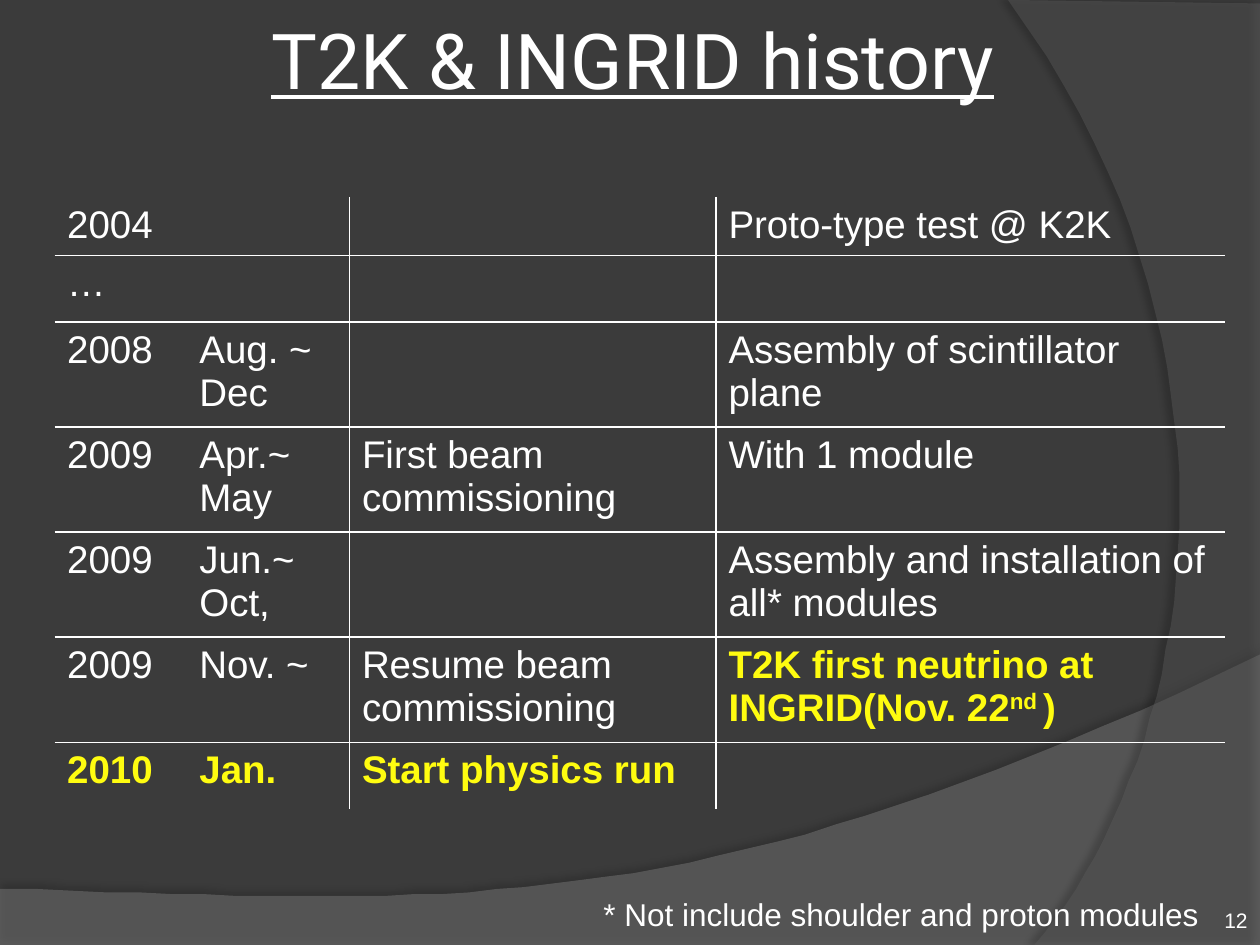
from lxml import etree
from pptx import Presentation
from pptx import util as u
from pptx.dml.color import RGBColor
from pptx.enum import text
from pptx.oxml import ns

COLORS = {"back": "3B3B3B", "wave": "7F7F7F", "arc": "5E5E5E",
          "white": "FFFFFF", "yellow": "FFFC10", "shadow": "000000"}
NO_GRID = "{2D5ABB26-0587-4C30-8999-92F81FD0307C}"


def child(parent, tag, **attributes):
    values = {key: str(value) for key, value in attributes.items()}
    return etree.SubElement(parent, ns.qn(tag), values)


def curve(start, control1, control2, end, steps=40):
    """Points along a cubic Bezier curve, both ends included."""
    points = []
    for step in range(steps + 1):
        t = step / steps
        weights = ((1 - t) ** 3, 3 * t * (1 - t) ** 2, 3 * t ** 2 * (1 - t), t ** 3)
        corners = (start, control1, control2, end)
        points.append(tuple(sum(w * c[axis] for w, c in zip(weights, corners))
                            for axis in (0, 1)))
    return points


class Deck:
    def __init__(self, slide, font="Arial"):
        self.slide = slide
        self.font = font
        back = slide.background.fill
        back.solid()
        back.fore_color.rgb = self.color("back")

    def color(self, name):
        return RGBColor.from_string(COLORS[name])

    def swoosh(self, points, color, alpha, shadow_alpha, distance, angle):
        """Translucent outline with a soft shadow."""
        builder = self.slide.shapes.build_freeform(*points[0], scale=u.Pt(1))
        builder.add_line_segments(points[1:], close=True)
        outline = builder.convert_to_shape()
        outline.fill.solid()
        outline.fill.fore_color.rgb = self.color(color)
        outline.line.fill.background()
        properties = outline._element.spPr
        tint = properties.find(ns.qn("a:solidFill"))[0]
        child(tint, "a:alpha", val=alpha * 1000)
        outline.shadow.inherit = False
        effects = properties.find(ns.qn("a:effectLst"))
        shadow = child(effects, "a:outerShdw", blurRad=u.Pt(4), dist=u.Pt(distance),
                       dir=angle * 60000, algn="ctr", rotWithShape=0)
        dark = child(shadow, "a:srgbClr", val=COLORS["shadow"])
        child(dark, "a:alpha", val=shadow_alpha * 1000)

    def run(self, paragraph, words, size, color="white", font=None,
            bold=False, underline=False, raised=False):
        run = paragraph.add_run()
        run.text = words
        run.font.name = font or self.font
        run.font.size = u.Pt(size)
        run.font.bold = bold
        run.font.underline = underline
        run.font.color.rgb = self.color(color)
        if raised:
            run._r.get_or_add_rPr().set("baseline", "30000")

    def label(self, box, words, size, align=text.PP_ALIGN.LEFT,
              anchor=text.MSO_ANCHOR.MIDDLE, **style):
        frame = self.slide.shapes.add_textbox(*map(u.Pt, box)).text_frame
        frame.word_wrap = True
        frame.vertical_anchor = anchor
        frame.paragraphs[0].alignment = align
        self.run(frame.paragraphs[0], words, size, **style)

    def table(self, left, top, widths, heights, rows, size, rules):
        """Each cell is a list of (words, style) runs; rules are the vertical
        lines, given by the number of the column to their left."""
        table = self.slide.shapes.add_table(
            len(heights), len(widths), u.Pt(left), u.Pt(top),
            u.Pt(sum(widths)), u.Pt(sum(heights))).table
        table.first_row = table.horz_banding = False
        table._tbl.tblPr.find(ns.qn("a:tableStyleId")).text = NO_GRID
        for column, width in zip(table.columns, widths):
            column.width = u.Pt(width)
        for row, height in zip(table.rows, heights):
            row.height = u.Pt(height)
        for r, row in enumerate(rows):
            for c, runs in enumerate(row):
                cell = table.cell(r, c)
                sides = {"L": c - 1 in rules, "R": c in rules,
                         "T": r > 0, "B": r < len(rows) - 1}
                self.borders(cell, [side for side, drawn in sides.items() if drawn])
                cell.fill.background()
                paragraph = cell.text_frame.paragraphs[0]
                paragraph.font.size = u.Pt(size)
                for words, style in runs:
                    self.run(paragraph, words, size, **style)

    def borders(self, cell, sides):
        properties = cell._tc.get_or_add_tcPr()
        for side in sides:
            line = child(properties, f"a:ln{side}", w=u.Pt(1))
            child(child(line, "a:solidFill"), "a:srgbClr", val=COLORS["white"])


def plain(words):
    return [(words, {})] if words else []


def main():
    presentation = Presentation()
    presentation.slide_width, presentation.slide_height = u.Pt(720), u.Pt(540)
    deck = Deck(presentation.slides.add_slide(presentation.slide_layouts[6]))

    # Background sweeps
    wave = curve((720, 374.4), (402.5, 525), (281.5, 517.7), (0, 507.6))
    deck.swoosh([(0, 540.5), (720, 540.5)] + wave, "wave", 45, 35, 3.5, 270)
    arc = curve((591, 540), (673, 445.7), (733, 216), (576, 0))
    deck.swoosh([(720, 1.5), (720, 540)] + arc, "arc", 40, 45, 4, 180)

    # Title and page number
    deck.label((-6.5, 0, 736.5, 67), "T2K & INGRID history", 44,
               text.PP_ALIGN.CENTER, font="Roboto", underline=True)
    deck.label((658, 511, 62, 29), "12", 12, text.PP_ALIGN.RIGHT)

    # History: year, months, beam, detector
    milestone = {"color": "yellow", "bold": True}
    first_neutrino = [("T2K first neutrino at INGRID(Nov. 22", milestone),
                      ("nd ", {**milestone, "raised": True}), (")", milestone)]
    history = [
        ("2004", "", "", "Proto-type test @ K2K"),
        ("…", "", "", ""),
        ("2008", "Aug. ~ Dec", "", "Assembly of scintillator plane"),
        ("2009", "Apr.~ May", "First beam commissioning", "With 1 module"),
        ("2009", "Jun.~ Oct,", "", "Assembly and installation of all* modules"),
        ("2009", "Nov. ~", "Resume beam commissioning", ""),
    ]
    rows = [[plain(words) for words in row] for row in history]
    rows[-1][-1] = first_neutrino
    rows.append([[(words, milestone)] for words in ("2010", "Jan.", "Start physics run")]
                + [[]])
    deck.table(31.2, 112.5, (75.6, 92.9, 209.5, 291), (31, 38, *[55.5] * 4, 38),
               rows, 22, rules=(1, 2))

    # Footnote
    deck.label((337.7, 507.6, 368.6, 29), "* Not include shoulder and proton modules",
               18, anchor=text.MSO_ANCHOR.TOP)

    presentation.save("out.pptx")


if __name__ == "__main__":
    main()
